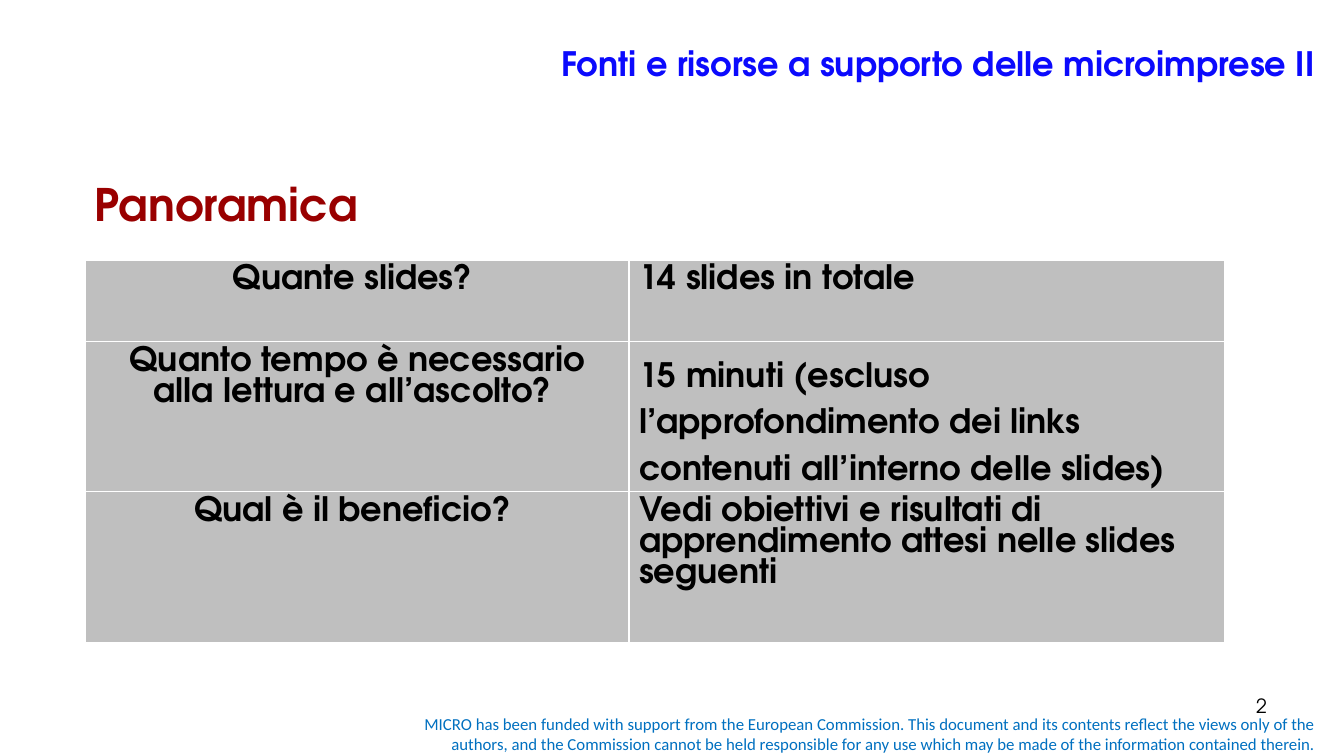
from dataclasses import dataclass

from lxml import etree
from pptx import Presentation
from pptx.dml.color import RGBColor
from pptx.enum.text import MSO_ANCHOR, PP_ALIGN
from pptx.oxml.ns import qn
from pptx.slide import Slide
from pptx.table import _Cell
from pptx.text.text import TextFrame
from pptx.util import Cm, Pt

LEFT, CENTER, RIGHT = PP_ALIGN.LEFT, PP_ALIGN.CENTER, PP_ALIGN.RIGHT
TOP, MIDDLE = MSO_ANCHOR.TOP, MSO_ANCHOR.MIDDLE


@dataclass(frozen=True)
class TextStyle:
    size: int
    color: str
    bold: bool = False
    font: str = "TeX Gyre Adventor"


@dataclass(frozen=True)
class Theme:
    title: TextStyle = TextStyle(24, "0B0AFD", True)
    heading: TextStyle = TextStyle(32, "990000", True)
    cell: TextStyle = TextStyle(24, "000000", True)
    number: TextStyle = TextStyle(14, "000000")
    footer: TextStyle = TextStyle(12, "0070C0", font="Calibri")
    cell_fill: str = "BFBFBF"
    border: str = "FFFFFF"
    border_width: int = 1


@dataclass(frozen=True)
class Label:
    text: str
    left: float
    top: float
    width: float
    height: float
    style: TextStyle
    align: PP_ALIGN = RIGHT
    anchor: MSO_ANCHOR = TOP


@dataclass(frozen=True)
class OverviewRow:
    question: str
    answer: str
    height: float
    answer_spacing: float = 1.0


THEME = Theme()
LABELS = [
    Label("MICRO has been funded with support from the European Commission. "
          "This document and its contents reflect the views only of the authors, "
          "and the Commission cannot be held responsible for any use which may be "
          "made of the information contained therein.",
          9.53, 17.86, 23.88, 1.27, THEME.footer, anchor=MIDDLE),
    Label("Fonti e risorse a supporto delle microimprese II",
          2.9, 0, 30.48, 3.18, THEME.title, anchor=MIDDLE),
    Label("2", 24.28, 17.35, 7.9, 1.32, THEME.number),
    Label("Panoramica", 2.13, 4.34, 7.37, 1.63, THEME.heading, LEFT),
]
TABLE_LEFT, TABLE_TOP = 2.16, 6.55
COLUMN_WIDTHS = [13.69, 15.01]
ROWS = [
    OverviewRow("Quante slides? ", "14 slides in totale", 2.06),
    OverviewRow("Quanto tempo è necessario alla lettura e all’ascolto? ",
                "15 minuti (escluso l’approfondimento dei links contenuti "
                "all’interno delle slides)", 3.78, 1.5),
    OverviewRow("Qual è il beneficio? ",
                "Vedi obiettivi e risultati di apprendimento attesi nelle "
                "slides seguenti", 3.81),
]


def write_text(frame: TextFrame, text: str, style: TextStyle,
               align: PP_ALIGN, spacing: float = 1.0) -> None:
    paragraph = frame.paragraphs[0]
    paragraph.alignment = align
    paragraph.line_spacing = spacing
    run = paragraph.add_run()
    run.text = text
    run.font.name = style.font
    run.font.size = Pt(style.size)
    run.font.bold = style.bold
    run.font.color.rgb = RGBColor.from_string(style.color)


def add_label(slide: Slide, label: Label) -> None:
    shape = slide.shapes.add_textbox(Cm(label.left), Cm(label.top),
                                     Cm(label.width), Cm(label.height))
    frame = shape.text_frame
    frame.word_wrap = True
    frame.vertical_anchor = label.anchor
    write_text(frame, label.text, label.style, label.align)


def format_cell(cell: _Cell) -> None:
    cell.fill.solid()
    cell.fill.fore_color.rgb = RGBColor.from_string(THEME.cell_fill)
    properties = cell._tc.get_or_add_tcPr()
    # Border lines must come before the fill.
    for index, side in enumerate(("lnL", "lnR", "lnT", "lnB")):
        line = etree.Element(qn(f"a:{side}"), w=str(Pt(THEME.border_width)))
        fill = etree.SubElement(line, qn("a:solidFill"))
        etree.SubElement(fill, qn("a:srgbClr"), val=THEME.border)
        properties.insert(index, line)


def add_overview_table(slide: Slide) -> None:
    total_height = sum(row.height for row in ROWS)
    table = slide.shapes.add_table(
        len(ROWS), len(COLUMN_WIDTHS), Cm(TABLE_LEFT), Cm(TABLE_TOP),
        Cm(sum(COLUMN_WIDTHS)), Cm(total_height)).table
    table.first_row = False
    table.horz_banding = False
    for column, width in zip(table.columns, COLUMN_WIDTHS):
        column.width = Cm(width)
    for table_row, row in zip(table.rows, ROWS):
        table_row.height = Cm(row.height)
        question, answer = table_row.cells
        write_text(question.text_frame, row.question, THEME.cell, CENTER)
        write_text(answer.text_frame, row.answer, THEME.cell, LEFT,
                   row.answer_spacing)
        for cell in (question, answer):
            format_cell(cell)


def main() -> None:
    presentation = Presentation()
    presentation.slide_width = Cm(33.87)
    presentation.slide_height = Cm(19.05)
    slide = presentation.slides.add_slide(presentation.slide_layouts[6])
    add_overview_table(slide)
    for label in LABELS:
        add_label(slide, label)
    presentation.save("out.pptx")


if __name__ == "__main__":
    main()
